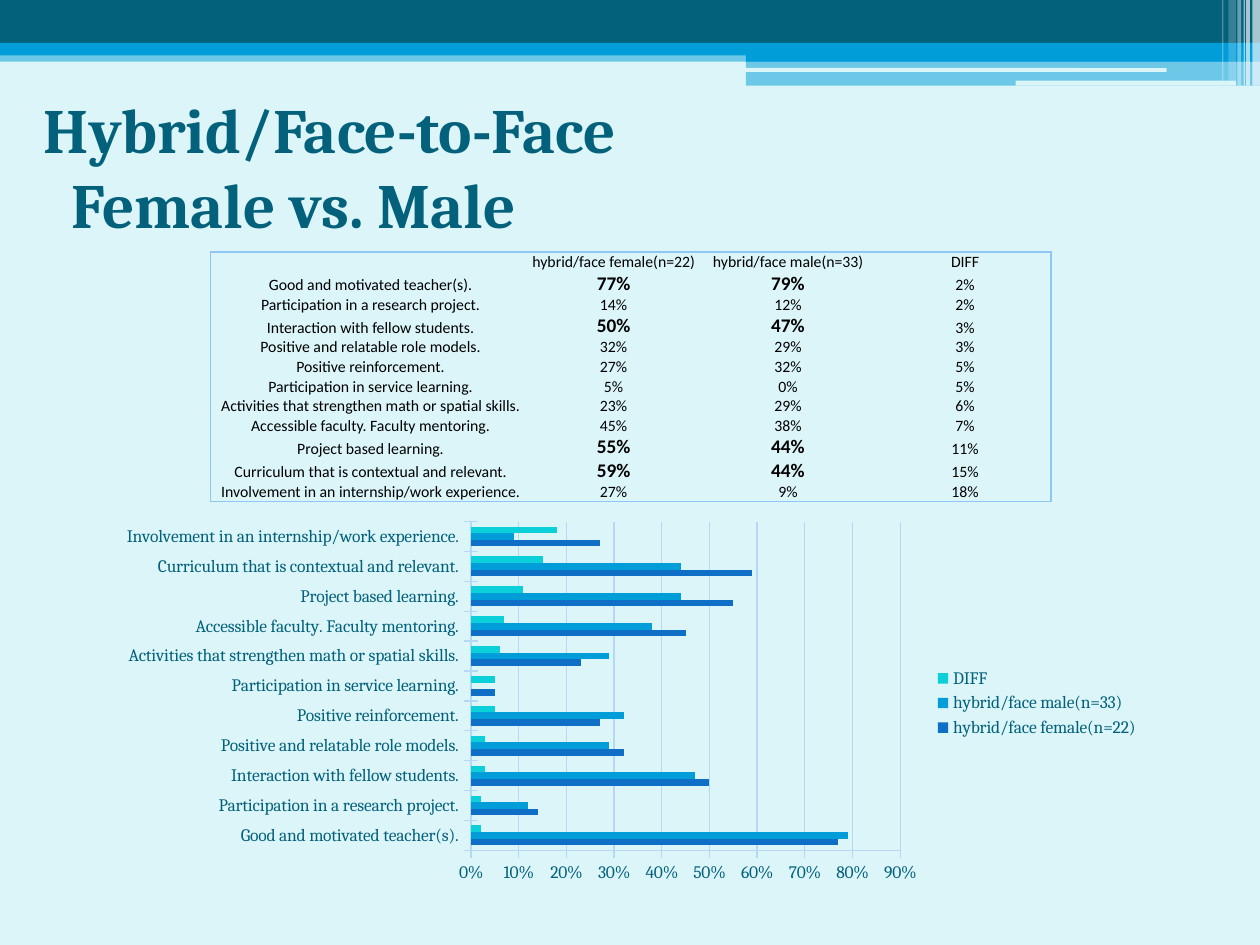
from lxml import etree
from pptx import Presentation
from pptx.chart.data import CategoryChartData
from pptx.dml.color import RGBColor
from pptx.enum.chart import XL_CHART_TYPE, XL_LEGEND_POSITION, XL_TICK_MARK
from pptx.enum.shapes import MSO_SHAPE
from pptx.enum.text import MSO_ANCHOR, PP_ALIGN
from pptx.oxml import parse_xml
from pptx.oxml.ns import qn
from pptx.util import Inches, Pt

BAR_CLUSTERED = XL_CHART_TYPE.BAR_CLUSTERED
LEGEND_RIGHT = XL_LEGEND_POSITION.RIGHT
TICK_CROSS = XL_TICK_MARK.CROSS
RECT, ROUNDED = MSO_SHAPE.RECTANGLE, MSO_SHAPE.ROUNDED_RECTANGLE
MIDDLE, BOTTOM = MSO_ANCHOR.MIDDLE, MSO_ANCHOR.BOTTOM
CENTER = PP_ALIGN.CENTER

PALE, TEAL, BLUE, WHITE, BLACK = "DBF5F9", "04617B", "009DD9", "FFFFFF", "000000"
BORDER, GRID = "90C6F6", "B5D8F5"
NO_STYLE_NO_GRID = "{2D5ABB26-0587-4C30-8999-92F81FD0307C}"
BOLD_FROM = 0.44  # rows where both groups reach this share stand out

# left, top, width, height, colour, opacity in percent
BANDS = [
    (0, 0.4, 10, 0.09, BLUE, 50),
    (0, 0, 10, 0.34, TEAL, 100),
    (0, 0.34, 10, 0.1, BLUE, 100),
    (5.92, 0.39, 4.08, 0.1, BLUE, 100),
    (5.92, 0.48, 4.08, 0.2, BLUE, 50),
]
SLITS = [(5.91, 0.54, 3.35, 0.03), (8.06, 0.64, 1.75, 0.04)]
# left, width, height, opacity in percent
STRIPES = [
    (9.94, 0.06, 0.68, 65), (9.89, 0.03, 0.68, 65), (9.87, 0.01, 0.68, 60),
    (9.82, 0.03, 0.68, 40), (9.75, 0.06, 0.64, 20), (9.7, 0.01, 0.64, 30),
]

GROUPS = ["hybrid/face female(n=22)", "hybrid/face male(n=33)", "DIFF"]
SERIES_COLORS = ["0F6FC6", BLUE, "0BD0D9"]
SHARES = [
    ("Good and motivated teacher(s).", 0.77, 0.79),
    ("Participation in a research project.", 0.14, 0.12),
    ("Interaction with fellow students.", 0.5, 0.47),
    ("Positive and relatable role models.", 0.32, 0.29),
    ("Positive reinforcement.", 0.27, 0.32),
    ("Participation in service learning.", 0.05, 0),
    ("Activities that strengthen math or spatial skills.", 0.23, 0.29),
    ("Accessible faculty. Faculty mentoring.", 0.45, 0.38),
    ("Project based learning.", 0.55, 0.44),
    ("Curriculum that is contextual and relevant.", 0.59, 0.44),
    ("Involvement in an internship/work experience.", 0.27, 0.09),
]
FACTORS = [(name, female, male, round(abs(female - male), 2))
           for name, female, male in SHARES]


def rgb(hex_color):
    return RGBColor.from_string(hex_color)


def style_font(font, name, size, color, bold=False):
    font.name, font.size, font.bold = name, Pt(size), bold
    font.color.rgb = rgb(color)


def add_band(slide, left, top, width, height, color, opacity=100, kind=RECT):
    band = slide.shapes.add_shape(
        kind, Inches(left), Inches(top), Inches(width), Inches(height))
    band.shadow.inherit = False
    band.fill.solid()
    band.fill.fore_color.rgb = rgb(color)
    band.line.fill.background()
    if opacity < 100:
        srgb = band.fill._xPr.find(".//" + qn("a:srgbClr"))
        etree.SubElement(srgb, qn("a:alpha"), val=str(opacity * 1000))


def add_header(slide):
    for band in BANDS:
        add_band(slide, *band)
    for slit in SLITS:
        add_band(slide, *slit, PALE, kind=ROUNDED)
    for left, width, height, opacity in STRIPES:
        add_band(slide, left, 0, width, height, WHITE, opacity)


def add_title(slide):
    title = slide.shapes.add_textbox(
        Inches(0.25), Inches(0.73), Inches(9.58), Inches(1.17)).text_frame
    title.word_wrap = True
    title.vertical_anchor = MIDDLE
    title.text = "Hybrid/Face-to-Face\nFemale vs. Male"
    for line in title.paragraphs:
        style_font(line.font, "Cambria", 36, TEAL, bold=True)
    title.paragraphs[1]._p.get_or_add_pPr().set("marL", str(Inches(0.22)))


def add_border(cell, side):
    border = etree.SubElement(
        cell._tc.get_or_add_tcPr(), qn("a:ln" + side), w=str(Pt(1)))
    fill = etree.SubElement(border, qn("a:solidFill"))
    etree.SubElement(fill, qn("a:srgbClr"), val=BORDER)


def fill_cell(cell, text, bold, sides):
    cell.margin_left = cell.margin_right = cell.margin_top = cell.margin_bottom = 0
    cell.vertical_anchor = BOTTOM
    for side in sides:
        add_border(cell, side)
    cell.fill.background()
    line = cell.text_frame.paragraphs[0]
    line.alignment = CENTER
    style_font(line.font, "Calibri", 11 if bold else 9, BLACK, bold)
    if text:
        line.add_run().text = text
    else:  # keeps the empty corner cell as low as its row
        etree.SubElement(line._p, qn("a:endParaRPr"), sz="900")


def add_share_table(slide):
    rows = [("", *GROUPS)] + [
        (name, *(f"{share:.0%}" for share in shares)) for name, *shares in FACTORS]
    table = slide.shapes.add_table(
        len(rows), 4, Inches(1.67), Inches(2), Inches(6.67), Inches(1.87)).table
    table.first_row = table.horz_banding = False
    table._tbl.tblPr.find(qn("a:tableStyleId")).text = NO_STYLE_NO_GRID
    for column, width in zip(table.columns, (2.54, 1.32, 1.45, 1.36)):
        column.width = Inches(width)
    for r, row in enumerate(rows):
        strong = r > 0 and min(FACTORS[r - 1][1:3]) >= BOLD_FROM
        for c, text in enumerate(row):
            edges = {"L": c == 0, "R": c == 3, "T": r == 0, "B": r == len(rows) - 1}
            sides = [side for side, outer in edges.items() if outer]
            fill_cell(table.cell(r, c), text, strong and c in (1, 2), sides)


def place_plot(chart, **fractions):
    modes = '<c:layoutTarget val="inner"/><c:xMode val="edge"/><c:yMode val="edge"/>'
    sizes = "".join(f'<c:{key} val="{value}"/>' for key, value in fractions.items())
    plot_area = chart._chartSpace.chart.plotArea
    for layout in plot_area.findall(qn("c:layout")):
        plot_area.remove(layout)
    plot_area.insert(0, parse_xml(
        '<c:layout xmlns:c="http://schemas.openxmlformats.org/drawingml/2006/chart">'
        f"<c:manualLayout>{modes}{sizes}</c:manualLayout></c:layout>"))


def add_share_chart(slide):
    data = CategoryChartData(number_format="0%")
    names, *columns = zip(*FACTORS)
    data.categories = names
    for group, shares in zip(GROUPS, columns):
        data.add_series(group, shares)
    chart = slide.shapes.add_chart(
        BAR_CLUSTERED, Inches(0.83), Inches(4.08), Inches(8.31), Inches(3), data).chart
    style_font(chart.font, "Cambria", 10, TEAL)
    chart.has_title = False
    chart.has_legend = True
    chart.legend.position = LEGEND_RIGHT
    chart.legend.include_in_layout = False

    # Bars
    bars = chart.plots[0]
    bars.vary_by_categories = False
    bars.gap_width = 150
    for series, color in zip(bars.series, SERIES_COLORS):
        series.format.fill.solid()
        series.format.fill.fore_color.rgb = rgb(color)

    # Axes
    shares_axis = chart.value_axis
    shares_axis.minimum_scale, shares_axis.maximum_scale = 0, 0.9
    shares_axis.major_unit = 0.1
    shares_axis.has_major_gridlines = True
    shares_axis.tick_labels.number_format = "0%"
    shares_axis.tick_labels.number_format_is_linked = False
    for axis in (chart.category_axis, shares_axis):
        axis.major_tick_mark = TICK_CROSS
    for part in (chart.category_axis, shares_axis, shares_axis.major_gridlines):
        part.format.line.color.rgb = rgb(GRID)
        part.format.line.width = Pt(0.75)
    place_plot(chart, x=0.35, y=0.02, w=0.41, h=0.87)


def main():
    deck = Presentation()
    deck.slide_width, deck.slide_height = Inches(10), Inches(7.5)
    slide = deck.slides.add_slide(deck.slide_layouts[6])
    slide.background.fill.solid()
    slide.background.fill.fore_color.rgb = rgb(PALE)
    add_header(slide)
    add_title(slide)
    add_share_table(slide)
    add_share_chart(slide)
    deck.save("out.pptx")


if __name__ == "__main__":
    main()
